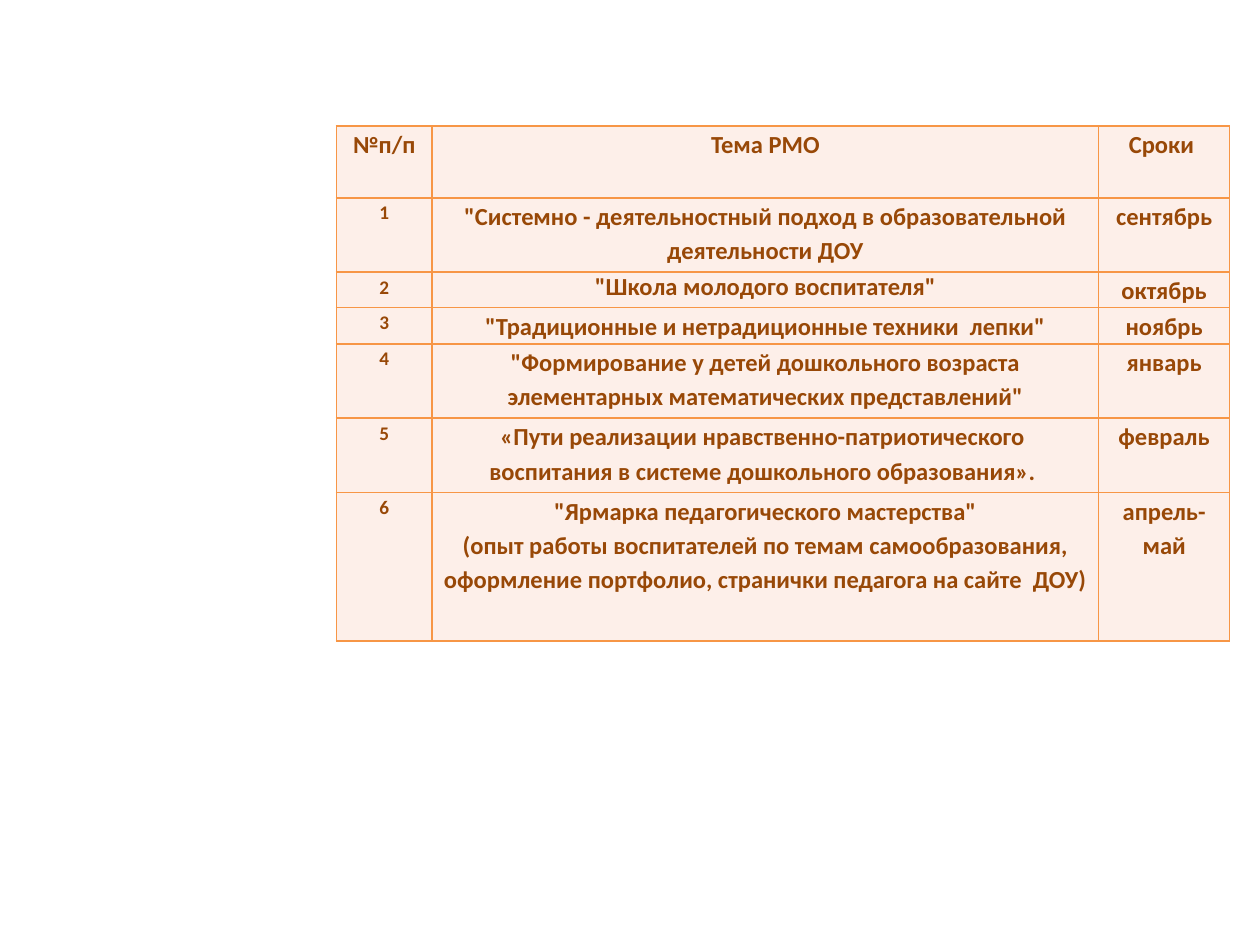
"""Build a slide with the yearly schedule of meeting topics."""
from lxml.etree import SubElement
from pptx import Presentation
from pptx.dml.color import RGBColor
from pptx.enum.text import PP_ALIGN
from pptx.oxml.ns import qn
from pptx.util import Inches, Pt

ROWS = [
    ("№п/п", "Тема РМО", "Сроки "),
    ("1", '"Системно - деятельностный подход в образовательной деятельности ДОУ', "сентябрь"),
    ("2", '"Школа молодого воспитателя"', "октябрь"),
    ("3", '"Традиционные и нетрадиционные техники  лепки"', "ноябрь"),
    ("4", '"Формирование у детей дошкольного возраста элементарных математических представлений"',
     "январь"),
    ("5", "«Пути реализации нравственно-патриотического  воспитания в системе "
          "дошкольного образования». ", "февраль"),
    ("6", '"Ярмарка педагогического мастерства"\n'
          "(опыт работы воспитателей по темам самообразования, оформление портфолио, "
          "странички педагога на сайте  ДОУ)", "апрель-май"),
]
COLUMN_WIDTHS = (0.76, 5.29, 1.04)
ROW_HEIGHTS = (0.57, 0.59, 0.28, 0.29, 0.59, 0.59, 1.18)
SINGLE_SPACED = (2, 1)
BROWN = RGBColor(0x98, 0x48, 0x07)
ORANGE = RGBColor(0xF7, 0x96, 0x46)
PEACH = RGBColor(0xFD, 0xEF, 0xE9)


def add_borders(cell):
    properties = cell._tc.get_or_add_tcPr()
    for position, side in enumerate(("lnL", "lnR", "lnT", "lnB")):
        line = properties.makeelement(qn(f"a:{side}"), {"w": str(Pt(1))})
        fill = SubElement(line, qn("a:solidFill"))
        SubElement(fill, qn("a:srgbClr"), val=str(ORANGE))
        properties.insert(position, line)


def fill_cell(cell, text, size, spacing):
    cell.margin_left = cell.margin_right = Inches(0.07)
    cell.margin_top = cell.margin_bottom = 0
    cell.fill.solid()
    cell.fill.fore_color.rgb = PEACH
    add_borders(cell)
    cell.text_frame.text = text
    for paragraph in cell.text_frame.paragraphs:
        paragraph.alignment = PP_ALIGN.CENTER
        paragraph.line_spacing = spacing
        for run in paragraph.runs:
            run.font.name = "Calibri"
            run.font.size = Pt(size)
            run.font.bold = True
            run.font.color.rgb = BROWN


def main():
    presentation = Presentation()
    presentation.slide_width, presentation.slide_height = Inches(10), Inches(7.5)
    slide = presentation.slides.add_slide(presentation.slide_layouts[6])
    table = slide.shapes.add_table(
        len(ROWS), len(COLUMN_WIDTHS), Inches(2.67), Inches(1),
        Inches(sum(COLUMN_WIDTHS)), Inches(sum(ROW_HEIGHTS))).table
    for column, width in zip(table.columns, COLUMN_WIDTHS):
        column.width = Inches(width)
    for row, height in zip(table.rows, ROW_HEIGHTS):
        row.height = Inches(height)
    for row_index, texts in enumerate(ROWS):
        for column_index, text in enumerate(texts):
            size = 11 if row_index and column_index == 0 else 14
            spacing = 1.0 if (row_index, column_index) == SINGLE_SPACED else 1.15
            fill_cell(table.cell(row_index, column_index), text, size, spacing)
    presentation.save("out.pptx")


if __name__ == "__main__":
    main()
